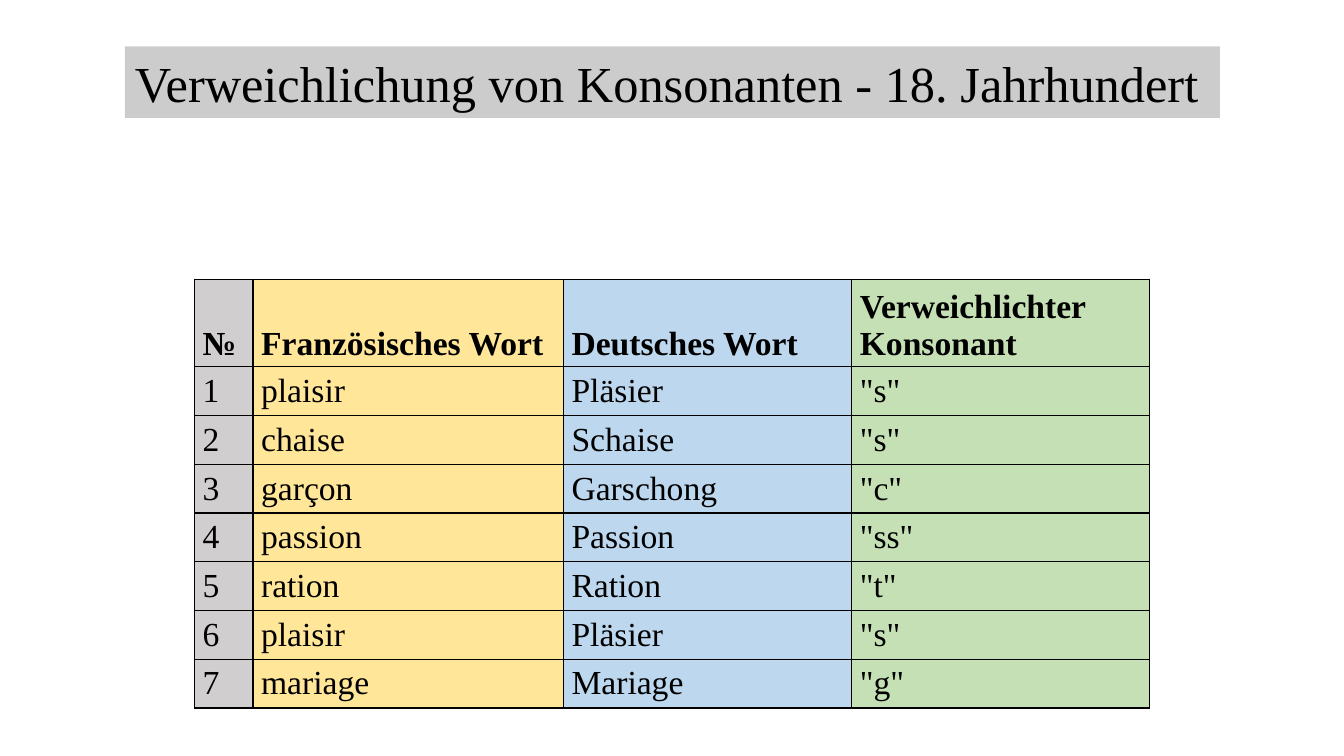
from lxml.etree import SubElement
from pptx import Presentation
from pptx.dml.color import RGBColor
from pptx.enum.shapes import MSO_SHAPE
from pptx.enum.text import MSO_ANCHOR, MSO_AUTO_SIZE, PP_ALIGN
from pptx.oxml import parse_xml
from pptx.oxml.ns import nsdecls, qn
from pptx.util import Inches, Pt

BLACK = RGBColor(0x00, 0x00, 0x00)
GREY = RGBColor(0xD0, 0xCE, 0xCE)
YELLOW = RGBColor(0xFF, 0xE6, 0x99)
BLUE = RGBColor(0xBD, 0xD7, 0xEE)
GREEN = RGBColor(0xC5, 0xE0, 0xB4)

TITLE = "Verweichlichung von Konsonanten - 18. Jahrhundert"
HEADER = ["№", "Französisches Wort", "Deutsches Wort", "Verweichlichter Konsonant"]
WORDS = [
    ("plaisir", "Pläsier", "s"),
    ("chaise", "Schaise", "s"),
    ("garçon", "Garschong", "c"),
    ("passion", "Passion", "ss"),
    ("ration", "Ration", "t"),
    ("plaisir", "Pläsier", "s"),
    ("mariage", "Mariage", "g"),
]
COLUMN_FILLS = [GREY, YELLOW, BLUE, GREEN]
# Shares of the slide's width and height, in percent
COLUMN_WIDTHS = [4.35, 23.1, 21.45, 22.13]
HEADER_HEIGHT, WORD_HEIGHT = 11.6, 6.45


class SlideBuilder:
    """Places styled elements; lengths are percentages of the slide."""

    font = {"name": "Times New Roman", "bold": False}

    def __init__(self, prs):
        self.width, self.height = prs.slide_width, prs.slide_height
        self.s = prs.slides.add_slide(prs.slide_layouts[6])

    def x(self, share):
        return round(self.width * share / 100)

    def y(self, share):
        return round(self.height * share / 100)

    def box(self, left, top, width, height):
        return self.x(left), self.y(top), self.x(width), self.y(height)

    def add_text(self, tf, text, size, **extra):
        p = tf.paragraphs[0]
        p.alignment = PP_ALIGN.LEFT
        r = p.add_run()
        r.text = text
        for key, value in {**self.font, "size": Pt(size), **extra}.items():
            setattr(r.font, key, value)
        r.font.color.rgb = BLACK

    def title_band(self, text, place, opacity):
        sp = self.s.shapes.add_shape(MSO_SHAPE.RECTANGLE, *self.box(*place))
        sp.shadow.inherit = False
        sp.line.fill.background()
        sp.fill.solid()
        sp.fill.fore_color.rgb = BLACK
        color = sp.element.spPr.find(".//" + qn("a:srgbClr"))
        SubElement(color, qn("a:alpha"), val=str(opacity * 1000))
        tf = sp.text_frame
        tf.word_wrap = False
        tf.auto_size = MSO_AUTO_SIZE.SHAPE_TO_FIT_TEXT
        self.add_text(tf, text, 36)

    def borders(self, cell, width=Pt(1)):
        tcPr = cell._tc.get_or_add_tcPr()
        for side in "LRTB":
            tcPr.append(parse_xml(
                f'<a:ln{side} {nsdecls("a")} w="{width}"><a:solidFill>'
                f'<a:srgbClr val="{BLACK}"/></a:solidFill></a:ln{side}>'))

    def cell(self, cell, text, fill, header):
        self.borders(cell)
        cell.fill.solid()
        cell.fill.fore_color.rgb = fill
        layout = {
            "margin_left": Inches(0.08), "margin_right": Inches(0.08),
            "margin_top": Inches(0.04), "margin_bottom": Inches(0.04),
            "vertical_anchor": MSO_ANCHOR.BOTTOM if header else MSO_ANCHOR.MIDDLE,
        }
        for key, value in layout.items():
            setattr(cell, key, value)
        self.add_text(cell.text_frame, text, 24, bold=header)

    def table(self, rows, left, top, widths, heights, fills):
        place = self.box(left, top, sum(widths), sum(heights))
        table = self.s.shapes.add_table(len(rows), len(widths), *place).table
        table.first_row = table.horz_banding = False
        for column, width in zip(table.columns, widths):
            column.width = self.x(width)
        for row, height in zip(table.rows, heights):
            row.height = self.y(height)
        for i, texts in enumerate(rows):
            for j, text in enumerate(texts):
                self.cell(table.cell(i, j), text, fills[j], header=i == 0)


def main():
    prs = Presentation()
    prs.slide_width, prs.slide_height = Inches(13.33), Inches(7.5)
    slide = SlideBuilder(prs)
    rows = [HEADER] + [
        [str(n), french, german, f'"{consonant}"']
        for n, (french, german, consonant) in enumerate(WORDS, 1)
    ]
    heights = [HEADER_HEIGHT] + [WORD_HEIGHT] * len(WORDS)
    slide.table(rows, 14.48, 36.93, COLUMN_WIDTHS, heights, COLUMN_FILLS)
    slide.title_band(TITLE, (9.3, 6.13, 81.47, 9.47), opacity=20)
    prs.save("out.pptx")


if __name__ == "__main__":
    main()
